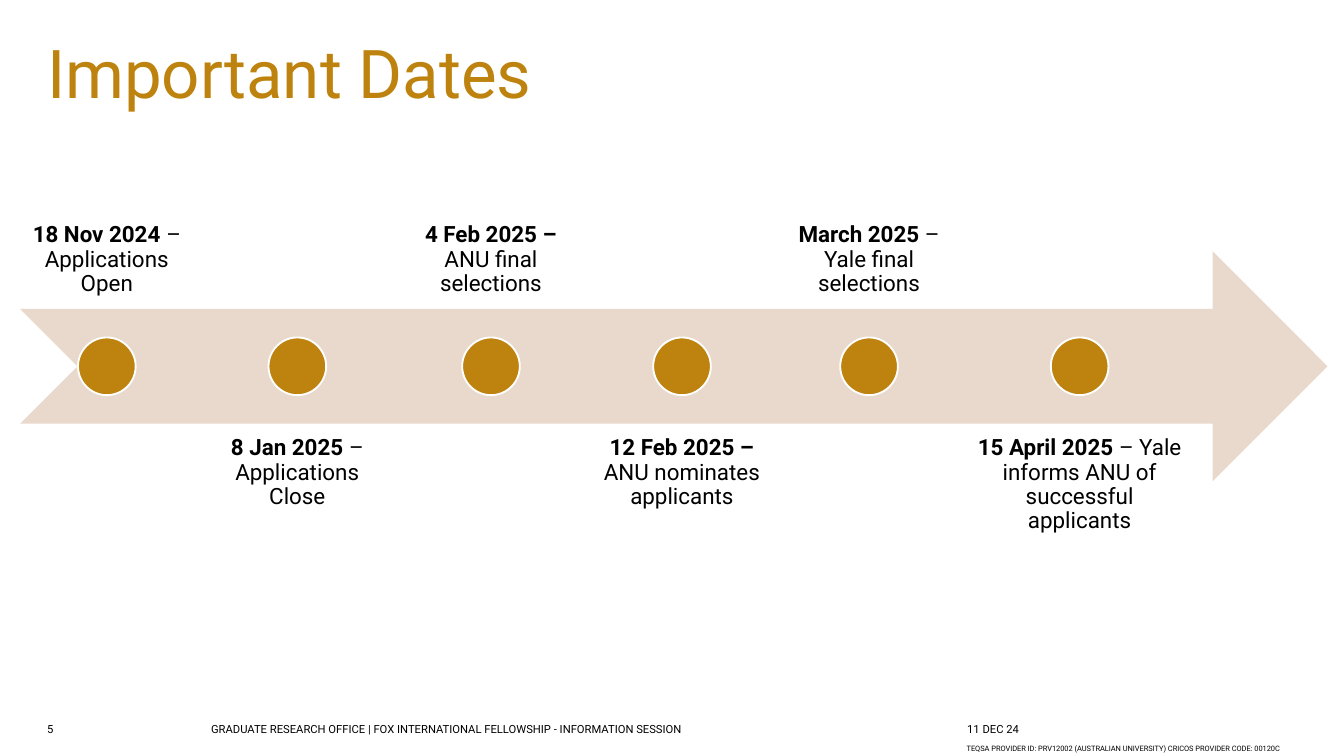
from pptx import Presentation
from pptx.dml.color import RGBColor
from pptx.enum.shapes import MSO_SHAPE as SHAPE
from pptx.enum.text import MSO_ANCHOR as ANCHOR, PP_ALIGN as ALIGN
from pptx.util import Cm, Pt

# Content
TITLE = "Important Dates"

# Milestones: box width in cm, bold date, description
MILESTONES = [
    (3.28, "18 Nov 2024 ", "– Applications Open"),
    (3.66, "8 Jan 2025 ", "– Applications Close"),
    (3.40, "4 Feb 2025 – ", "ANU final selections"),
    (3.56, "12 Feb 2025 – ", "ANU nominates applicants"),
    (3.25, "March 2025", " – Yale final selections"),
    (4.45, "15 April 2025", " – Yale informs ANU of successful applicants"),
]

# Footer: text, left, top, width, height in cm, size in points
FOOTER = [
    ("5", 0.89, 13.64, 1, 0.3, 6),
    ("GRADUATE RESEARCH OFFICE | FOX INTERNATIONAL FELLOWSHIP - INFORMATION SESSION",
     3.99, 13.64, 15, 0.3, 6),
    ("11 DEC 24", 18.28, 13.65, 2, 0.3, 6),
    ("TEQSA PROVIDER ID: PRV12002 (AUSTRALIAN UNIVERSITY) CRICOS PROVIDER CODE: 00120C",
     18.27, 14.05, 9.17, 0.46, 4),
]

# Style and layout, lengths in cm
FONT, GOLD, SAND, WHITE, BLACK = "Roboto", "BE830E", "E8D9CC", "FFFFFF", "000000"
ARROW_LEFT, ARROW_TOP, ARROW_W, ARROW_H = 0.38, 4.75, 24.71, 4.34
GAP, DOT = 0.13, 1.09

prs = Presentation()
prs.slide_width, prs.slide_height = Cm(25.4), Cm(14.28)
slide = prs.slides.add_slide(prs.slide_layouts[6])


def rgb(value):
    return RGBColor.from_string(value)


def add_text(runs, left, top, width, height, size, color=BLACK,
             inset=0, anchor=ANCHOR.TOP, align=ALIGN.LEFT, spacing=1.0):
    """Add a one-paragraph box; runs are (text, bold) pairs."""
    box = slide.shapes.add_textbox(Cm(left), Cm(top), Cm(width), Cm(height))
    tf = box.text_frame
    tf.word_wrap = True
    tf.vertical_anchor = anchor
    tf.margin_left = tf.margin_right = tf.margin_top = tf.margin_bottom = Cm(inset)
    p = tf.paragraphs[0]
    p.alignment, p.line_spacing = align, spacing
    p.font.name, p.font.size = FONT, Pt(size)
    p.font.color.rgb = rgb(color)
    for text, bold in runs:
        r = p.add_run()
        r.text, r.font.bold = text, bold


def add_shape(kind, left, top, width, height, fill, line=None):
    sp = slide.shapes.add_shape(kind, Cm(left), Cm(top), Cm(width), Cm(height))
    sp.shadow.inherit = False
    sp.fill.solid()
    sp.fill.fore_color.rgb = rgb(fill)
    if line:
        sp.line.color.rgb = rgb(line)
        sp.line.width = Pt(1)
    else:
        sp.line.fill.background()


# Title and footer
add_text([(TITLE, False)], 0.89, 0.89, 23.5, 2.59, 36, GOLD, spacing=0.8)
for text, left, top, width, height, size in FOOTER:
    add_text([(text, False)], left, top, width, height, size)

# Timeline arrow
add_shape(SHAPE.NOTCHED_RIGHT_ARROW, ARROW_LEFT, ARROW_TOP, ARROW_W, ARROW_H, SAND)

# Milestones alternate above and below the arrow's shaft
left = ARROW_LEFT
for i, (width, date, detail) in enumerate(MILESTONES):
    above = i % 2 == 0
    top = ARROW_TOP + (-0.75 if above else 0.75) * ARROW_H
    add_text([(date, True), (detail, False)], left, top, width, ARROW_H, 12,
             inset=0.24, anchor=ANCHOR.BOTTOM if above else ANCHOR.TOP,
             align=ALIGN.CENTER, spacing=0.9)
    add_shape(SHAPE.OVAL, left + (width - DOT) / 2, ARROW_TOP + (ARROW_H - DOT) / 2,
              DOT, DOT, GOLD, WHITE)
    left += width + GAP

prs.save("out.pptx")
